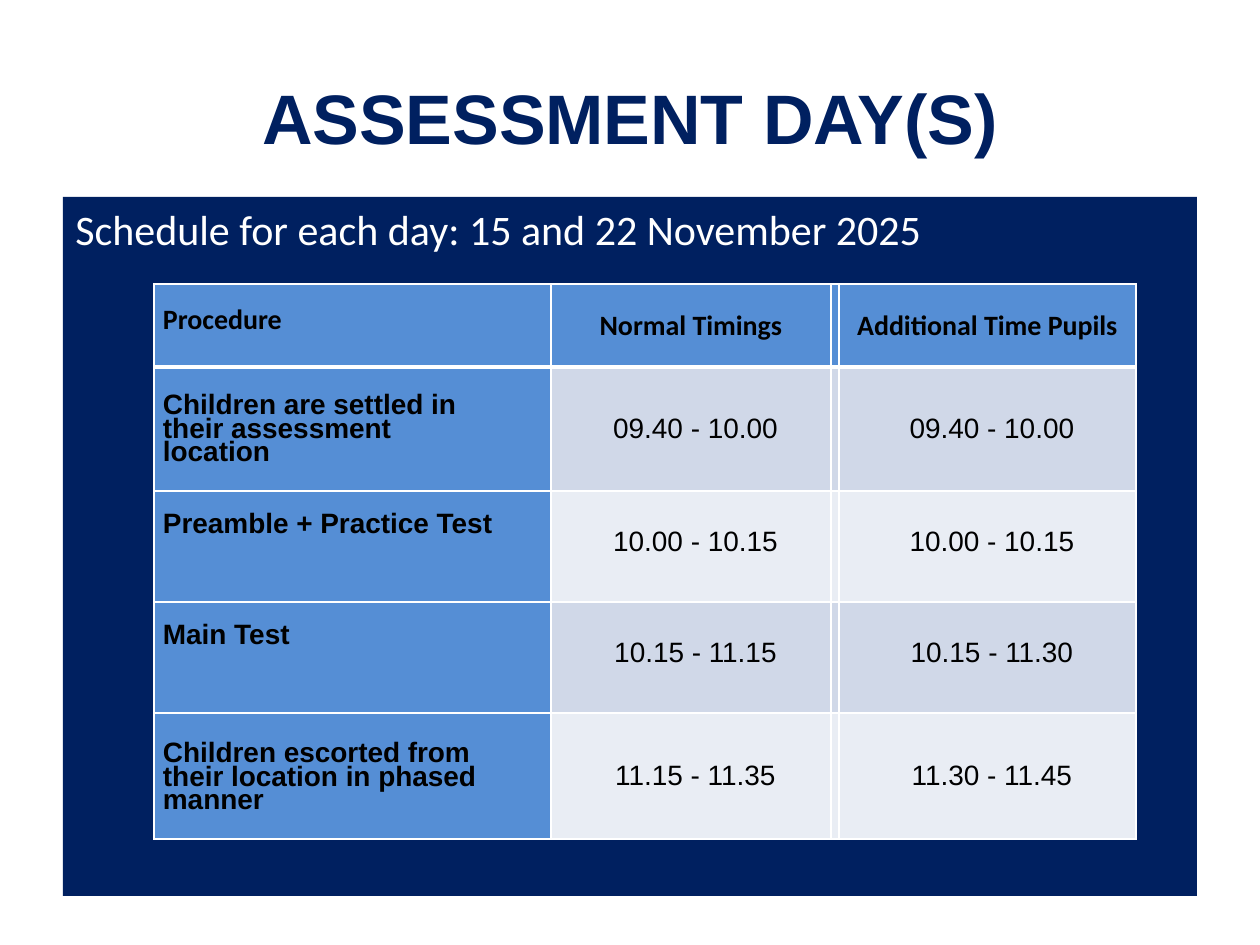
from lxml.etree import SubElement
from pptx import Presentation
from pptx.dml.color import RGBColor as Rgb
from pptx.enum.shapes import MSO_SHAPE as Shape
from pptx.enum.text import MSO_ANCHOR as Anchor, PP_ALIGN as Align
from pptx.oxml.ns import qn
from pptx.util import Pt

SCALE = 914400 / 126
COLORS = {
    "navy": "002060",
    "blue": "558ED5",
    "dark_band": "D0D8E8",
    "light_band": "E9EDF4",
    "white": "FFFFFF",
    "black": "000000",
}


def px(*lengths):
    return [round(length * SCALE) for length in lengths]


def style(para, font_name, size, color, bold, align):
    para.font.name = font_name
    para.font.size = Pt(size)
    para.font.bold = bold
    para.font.color.rgb = Rgb.from_string(COLORS[color])
    para.alignment = align


deck = Presentation()
deck.slide_width, deck.slide_height = px(1260, 945)
page = deck.slides.add_slide(deck.slide_layouts[5])

title = page.shapes.title
title.left, title.top, title.width, title.height = px(63, 38, 1134, 157)
title.text_frame.text = "ASSESSMENT DAY(S)"
title.text_frame.vertical_anchor = Anchor.MIDDLE
style(title.text_frame.paragraphs[0], "Arial", 40, "navy", True, Align.CENTER)

panel = page.shapes.add_shape(Shape.RECTANGLE, *px(63, 197, 1134, 699))
panel.shadow.inherit = False
panel.fill.solid()
panel.fill.fore_color.rgb = Rgb.from_string(COLORS["navy"])
panel.line.fill.background()
panel.text_frame.word_wrap = True
panel.text_frame.vertical_anchor = Anchor.TOP
panel.text_frame.text = "Schedule for each day: 15 and 22 November 2025"
style(panel.text_frame.paragraphs[0], "Calibri", 24, "white", False, Align.LEFT)

schedule = [
    ("Procedure", "Normal Timings", "", "Additional Time Pupils"),
    ("Children are settled in their assessment location", "09.40 - 10.00", "", "09.40 - 10.00"),
    ("Preamble + Practice Test", "10.00 - 10.15", "", "10.00 - 10.15"),
    ("Main Test", "10.15 - 11.15", "", "10.15 - 11.30"),
    ("Children escorted from their location in phased manner", "11.15 - 11.35", "", "11.30 - 11.45"),
]
column_widths = px(397, 280, 8, 297)
row_heights = px(83, 124, 111, 111, 126)
top_margins = px(0, 30, 26, 26, 32)
line_spacings = [13.5, 13.5, 12.8, 12.8, 13.5]
label_indent, label_right, time_indent = px(9, 50, 9)

frame = page.shapes.add_table(
    len(schedule), len(column_widths), *px(154, 284), sum(column_widths), sum(row_heights)
)
table = frame.table
for column, width in zip(table.columns, column_widths):
    column.width = width
for row, height in zip(table.rows, row_heights):
    row.height = height

for row_index, texts in enumerate(schedule):
    for column_index, text in enumerate(texts):
        is_header = row_index == 0
        is_label = column_index == 0
        cell = table.cell(row_index, column_index)
        cell.margin_left = cell.margin_right = cell.margin_top = cell.margin_bottom = 0
        cell.vertical_anchor = Anchor.MIDDLE
        cell.text = text
        para = cell.text_frame.paragraphs[0]
        style(
            para,
            "Calibri" if is_header else "Arial",
            16,
            "black",
            is_header or is_label,
            Align.LEFT if is_label else Align.CENTER,
        )
        if is_label:
            cell.margin_left = label_indent
            cell.margin_right = label_right
            cell.margin_top = top_margins[row_index]
            if not is_header:
                cell.vertical_anchor = Anchor.TOP
        elif text and not is_header:
            cell.margin_left = time_indent
        if is_label or row_index in (2, 3):
            para.line_spacing = Pt(line_spacings[row_index])

        band = "dark_band" if row_index % 2 else "light_band"
        properties = cell._tc.get_or_add_tcPr()
        for side in ("L", "R", "T", "B"):
            thick = (row_index, side) in ((0, "B"), (1, "T"))
            border = SubElement(properties, qn(f"a:ln{side}"), w=str(Pt(3 if thick else 1)))
            border_fill = SubElement(border, qn("a:solidFill"))
            SubElement(border_fill, qn("a:srgbClr"), val=COLORS["white"])
        cell.fill.solid()
        cell.fill.fore_color.rgb = Rgb.from_string(COLORS["blue" if is_header or is_label else band])

deck.save("out.pptx")
